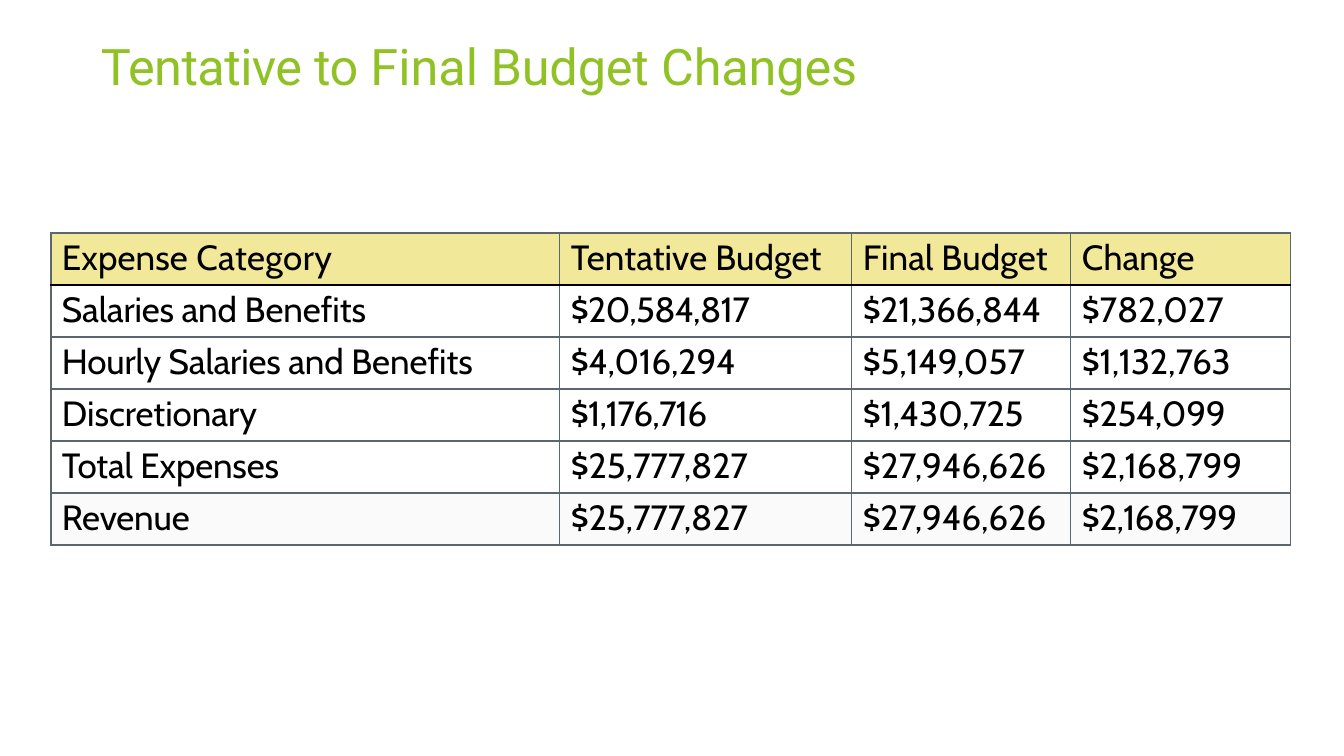
import pptx
import pptx.dml.color
import pptx.enum.text
import pptx.oxml.ns
import pptx.util
from lxml import etree

# Each run is (text, letter spacing in hundredths of a point).
TITLE = [("Tentative ", -40), ("to ", -30), ("Final ", 0), ("Budget Changes", -10)]
BUDGET = [
    [[("Expense ", 10), ("Category", 30)], [("Tentative Budget", 10)],
     [("Final Budget", 10)], [("Change", 10)]],
    [[("Salaries and ", -10), ("Benefits", 0)], [("$20,584,817", -50)],
     [("$21,366,844", -30)], [("$782,027", -10)]],
    [[("Hourly Salaries and ", -10), ("Benefits", 0)], [("$4,016,294", -10)],
     [("$5,149,057", -10)], [("$1,132,763", -10)]],
    [[("Discretionary", 0)], [("$1,176,716", -60)],
     [("$1,430,725", -20)], [("$254,099", -20)]],
    [[("Total Expenses", -10)], [("$25,777,827", -10)],
     [("$27,946,626", -10)], [("$2,168,799", -10)]],
    [[("Revenue", -10)], [("$25,777,827", -10)],
     [("$27,946,626", -10)], [("$2,168,799", -50)]],
]
COLORS = {"title": "90C226", "text": "000000", "header": "F1E999",
          "revenue": "FAFAFA", "grid": "5B676F", "header rule": "000000"}
TITLE_FONT = {"name": "Roboto", "size": pptx.util.Pt(36), "bold": False}
CELL_FONT = {"name": "Cabin", "size": pptx.util.Pt(25), "bold": False}

SLIDE_SIZE = (1344, 756)
TITLE_BOX = (101, 34, 886, 77)
TABLE_LEFT, TABLE_TOP = 51, 233
COLUMN_WIDTHS = [509, 292, 219, 220]
ROW_HEIGHT = 52
CELL_INDENT = 11
OUTER, INNER, HEAVY = 1, 0.75, 2.25  # border widths in points


def px(length):
    return pptx.util.Emu(round(length * 914400 / 100.8))


def color(name):
    return pptx.dml.color.RGBColor.from_string(COLORS[name])


def write_runs(para, runs, font, color_name):
    for text, spacing in runs:
        span = para.add_run()
        span.text = text
        for key, value in font.items():
            setattr(span.font, key, value)
        span.font.color.rgb = color(color_name)
        span.font._element.set("spc", str(spacing))


def set_borders(cell, borders):
    """Put the border lines ahead of the fill, as the schema orders them."""
    properties = cell._tc.get_or_add_tcPr()
    qn = pptx.oxml.ns.qn
    for position, (side, (color_name, width)) in enumerate(borders.items()):
        line = etree.Element(qn(f"a:ln{side}"), w=str(pptx.util.Pt(width)))
        fill = etree.SubElement(line, qn("a:solidFill"))
        etree.SubElement(fill, qn("a:srgbClr"), val=COLORS[color_name])
        properties.insert(position, line)


def rule_below(row):
    """Border under a row; row -1 gives the top edge of the table."""
    if row == 0:
        return "header rule", HEAVY
    return "grid", HEAVY if row == len(BUDGET) - 2 else OUTER


def rule_before(column):
    return "grid", OUTER if column in (0, len(COLUMN_WIDTHS)) else INNER


def add_title(page):
    title = page.shapes.title
    title.left, title.top, title.width, title.height = map(px, TITLE_BOX)
    frame = title.text_frame
    layout = {"margin_left": 0, "margin_top": px(1), "margin_right": 0,
              "margin_bottom": 0, "word_wrap": True,
              "auto_size": pptx.enum.text.MSO_AUTO_SIZE.NONE,
              "vertical_anchor": pptx.enum.text.MSO_ANCHOR.TOP}
    for key, value in layout.items():
        setattr(frame, key, value)
    para = frame.paragraphs[0]
    para.alignment = pptx.enum.text.PP_ALIGN.LEFT
    write_runs(para, TITLE, TITLE_FONT, "title")


def add_budget_table(page):
    table = page.shapes.add_table(
        len(BUDGET), len(COLUMN_WIDTHS), px(TABLE_LEFT), px(TABLE_TOP),
        px(sum(COLUMN_WIDTHS)), px(ROW_HEIGHT * len(BUDGET))).table
    table.first_row = table.horz_banding = False
    for column, width in zip(table.columns, COLUMN_WIDTHS):
        column.width = px(width)
    row_fills = {0: "header", len(BUDGET) - 1: "revenue"}
    layout = {"margin_left": px(CELL_INDENT), "margin_top": px(4),
              "margin_right": 0, "margin_bottom": 0,
              "vertical_anchor": pptx.enum.text.MSO_ANCHOR.TOP}
    for row, entries in enumerate(BUDGET):
        table.rows[row].height = px(ROW_HEIGHT)
        for column, runs in enumerate(entries):
            cell = table.cell(row, column)
            for key, value in layout.items():
                setattr(cell, key, value)
            if row in row_fills:
                cell.fill.solid()
                cell.fill.fore_color.rgb = color(row_fills[row])
            else:
                cell.fill.background()
            set_borders(cell, {"L": rule_before(column), "R": rule_before(column + 1),
                               "T": rule_below(row - 1), "B": rule_below(row)})
            write_runs(cell.text_frame.paragraphs[0], runs, CELL_FONT, "text")


def main():
    deck = pptx.Presentation()
    deck.slide_width, deck.slide_height = map(px, SLIDE_SIZE)
    page = deck.slides.add_slide(deck.slide_layouts.get_by_name("Title Only"))
    add_title(page)
    add_budget_table(page)
    deck.save("out.pptx")


if __name__ == "__main__":
    main()
